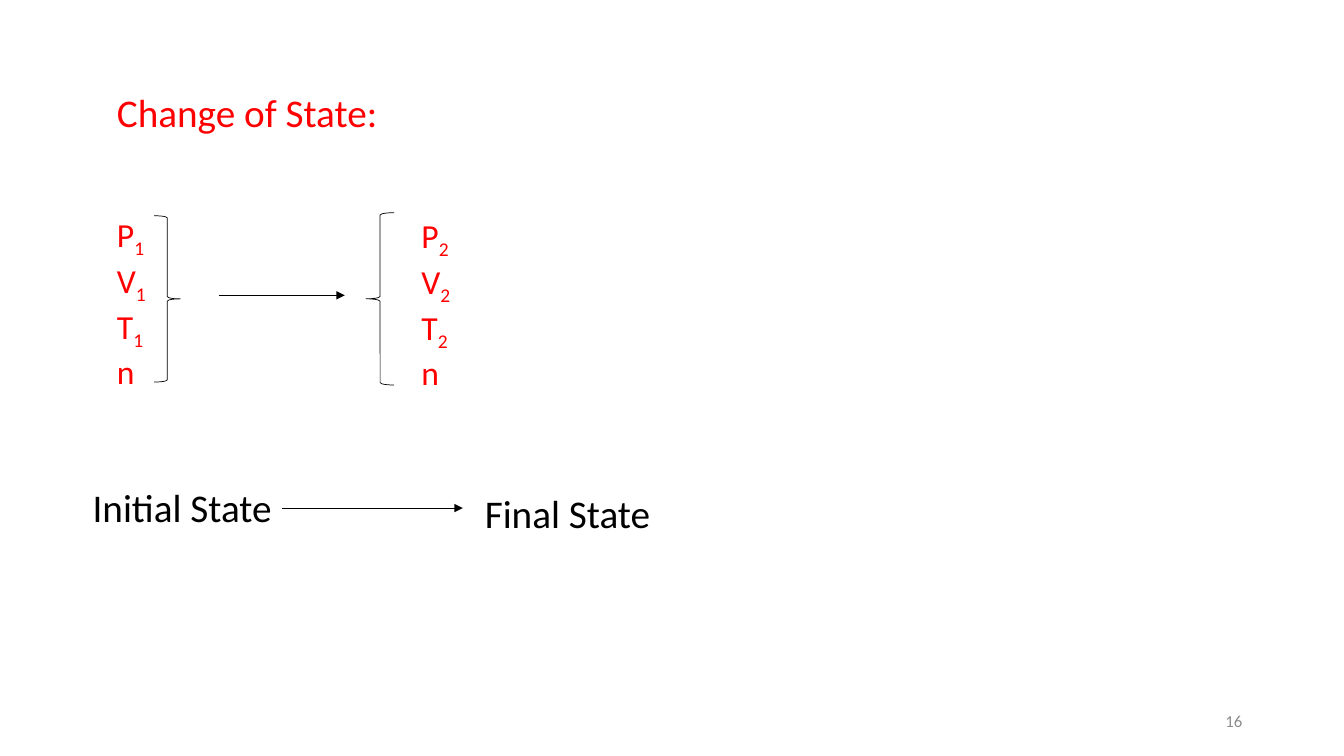
from dataclasses import dataclass

from lxml import etree
from pptx import Presentation
from pptx.dml.color import RGBColor
from pptx.enum.shapes import MSO_CONNECTOR, MSO_SHAPE
from pptx.enum.text import MSO_ANCHOR, MSO_AUTO_SIZE, PP_ALIGN
from pptx.oxml.ns import qn
from pptx.util import Inches, Pt

RED = RGBColor(0xFF, 0x00, 0x00)
BLACK = RGBColor(0x00, 0x00, 0x00)
GREY = RGBColor(0x8C, 0x8C, 0x8C)
FONT = "Calibri"
LINE_WIDTH = Pt(0.5)
TWO_CONTENT_LAYOUT = 3


@dataclass(frozen=True)
class Box:
    left: float
    top: float
    width: float
    height: float

    def lengths(self) -> tuple:
        return tuple(Inches(v) for v in (self.left, self.top, self.width, self.height))


@dataclass(frozen=True)
class State:
    subscript: str
    variables: Box
    brace: MSO_SHAPE
    brace_box: Box


@dataclass(frozen=True)
class Label:
    text: str
    box: Box
    size: int
    color: RGBColor
    align: PP_ALIGN = PP_ALIGN.LEFT
    anchor: MSO_ANCHOR = MSO_ANCHOR.TOP


@dataclass(frozen=True)
class Arrow:
    start: float
    end: float
    y: float


HEADING = Label("Change of State:", Box(1.06, 0.83, 2.81, 0.57), 28, RED)
STATES = (
    State("1", Box(1.06, 2.07, 0.51, 1.72), MSO_SHAPE.RIGHT_BRACE, Box(1.53, 2.14, 0.26, 1.65)),
    State("2", Box(4.08, 2.08, 0.51, 1.72), MSO_SHAPE.LEFT_BRACE, Box(3.63, 2.11, 0.28, 1.71)),
)
LABELS = (
    Label("Initial State", Box(0.82, 4.75, 2.09, 0.57), 28, BLACK),
    Label("Final State", Box(4.71, 4.81, 1.86, 0.57), 28, BLACK),
    Label("16", Box(9.42, 6.95, 3, 0.4), 12, GREY, PP_ALIGN.RIGHT, MSO_ANCHOR.MIDDLE),
)
ARROWS = (Arrow(2.17, 3.42, 2.93), Arrow(2.8, 4.59, 5.04))


def place(shape, box: Box) -> None:
    shape.left, shape.top, shape.width, shape.height = box.lengths()


def style_paragraph(paragraph, size: int, color: RGBColor) -> None:
    paragraph.space_before = Pt(0)
    paragraph.font.name = FONT
    paragraph.font.size = Pt(size)
    paragraph.font.color.rgb = color


def write_label(shape, label: Label) -> None:
    frame = shape.text_frame
    frame.auto_size = MSO_AUTO_SIZE.NONE
    frame.word_wrap = label.align == PP_ALIGN.RIGHT
    frame.vertical_anchor = label.anchor
    paragraph = frame.paragraphs[0]
    paragraph.text = label.text
    paragraph.alignment = label.align
    style_paragraph(paragraph, label.size, label.color)


def write_variables(body, state: State) -> None:
    place(body, state.variables)
    frame = body.text_frame
    frame.auto_size = MSO_AUTO_SIZE.NONE
    frame.word_wrap = False
    for index, variable in enumerate("PVTn"):
        paragraph = frame.add_paragraph() if index else frame.paragraphs[0]
        properties = paragraph._p.get_or_add_pPr()
        properties.set("marL", "0")
        properties.set("indent", "0")
        etree.SubElement(properties, qn("a:buNone"))
        style_paragraph(paragraph, 24, RED)
        paragraph.add_run().text = variable
        if variable != "n":
            subscript = paragraph.add_run()
            subscript.text = state.subscript
            subscript._r.get_or_add_rPr().set("baseline", "-25000")


def add_brace(slide, state: State) -> None:
    brace = slide.shapes.add_shape(state.brace, *state.brace_box.lengths())
    brace.shadow.inherit = False
    brace.fill.background()
    brace.line.color.rgb = BLACK
    brace.line.width = LINE_WIDTH


def add_arrow(slide, arrow: Arrow) -> None:
    y = Inches(arrow.y)
    connector = slide.shapes.add_connector(
        MSO_CONNECTOR.STRAIGHT, Inches(arrow.start), y, Inches(arrow.end), y
    )
    connector.line.color.rgb = BLACK
    connector.line.width = LINE_WIDTH
    etree.SubElement(connector.line._get_or_add_ln(), qn("a:tailEnd"), type="triangle")
    etree.SubElement(connector._element.spPr, qn("a:effectLst"))


def main() -> None:
    presentation = Presentation()
    presentation.slide_width = Inches(13.33)
    presentation.slide_height = Inches(7.5)
    slide = presentation.slides.add_slide(presentation.slide_layouts[TWO_CONTENT_LAYOUT])

    heading, *bodies = slide.placeholders
    place(heading, HEADING.box)
    write_label(heading, HEADING)
    for body, state in zip(bodies, STATES):
        write_variables(body, state)
        add_brace(slide, state)
    for label in LABELS:
        write_label(slide.shapes.add_textbox(*label.box.lengths()), label)
    for arrow in ARROWS:
        add_arrow(slide, arrow)

    presentation.save("out.pptx")


if __name__ == "__main__":
    main()
